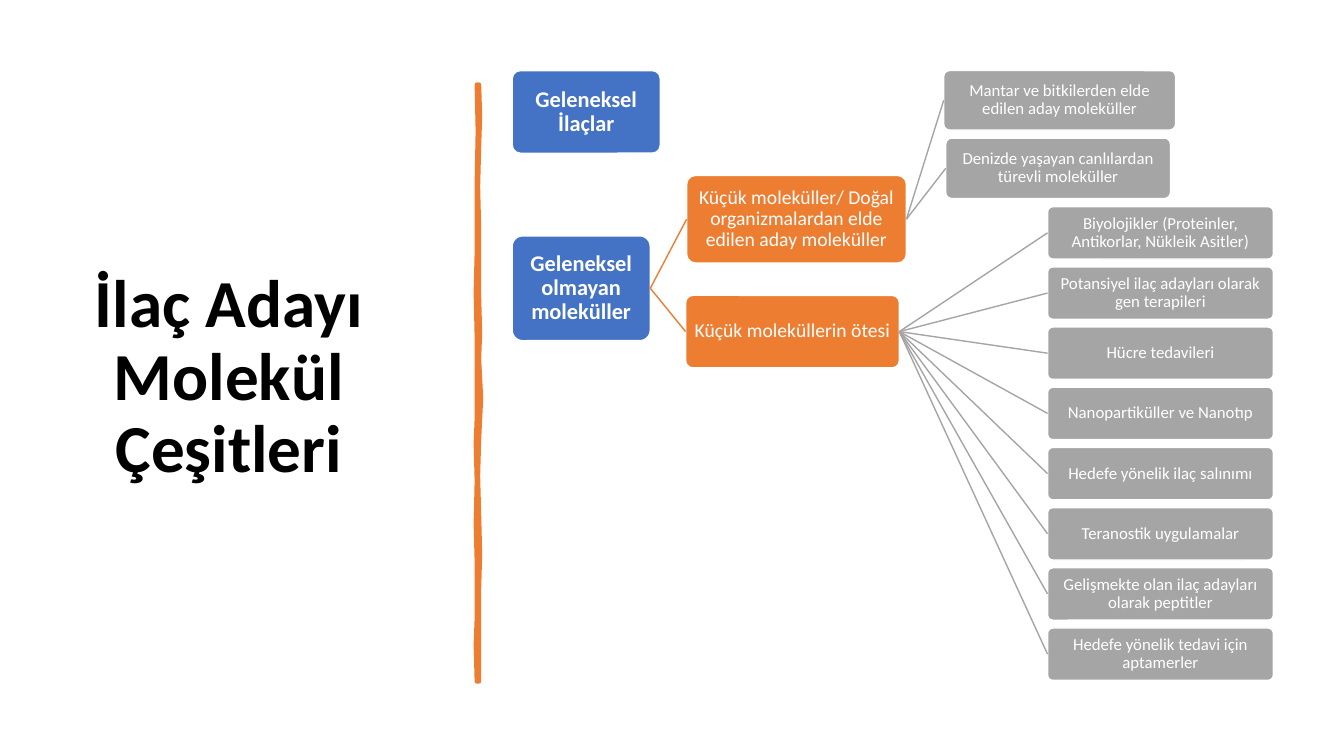
from dataclasses import dataclass
from typing import Optional

from lxml.etree import SubElement
from pptx import Presentation
from pptx.dml.color import RGBColor
from pptx.enum.shapes import MSO_CONNECTOR as Connector, MSO_SHAPE as Preset
from pptx.enum.text import MSO_ANCHOR as Anchor, MSO_AUTO_SIZE as AutoSize, PP_ALIGN as Align
from pptx.oxml.ns import qn
from pptx.util import Inches, Pt


@dataclass(frozen=True)
class Theme:
    font: str = "Calibri"
    black: str = "000000"
    white: str = "FFFFFF"
    blue: str = "4472C4"
    orange: str = "ED7D31"
    grey: str = "A5A5A5"
    title_size: float = 48
    group_size: float = 16
    branch_size: float = 14
    leaf_size: float = 12
    line_width: float = 1
    divider_width: float = 3.25


THEME = Theme()


@dataclass(frozen=True)
class Level:
    color: str
    size: float
    bold: bool = False


GROUP = Level(THEME.blue, THEME.group_size, True)
BRANCH = Level(THEME.orange, THEME.branch_size)
LEAF = Level(THEME.grey, THEME.leaf_size)


@dataclass(frozen=True)
class Node:
    text: str
    left: float
    top: float
    width: float
    height: float
    level: Level
    parent: Optional[str] = None


# Tree content
TRADITIONAL = "Geleneksel İlaçlar"
NON_TRADITIONAL = "Geleneksel olmayan moleküller"
NATURAL = "Küçük moleküller/ Doğal organizmalardan elde edilen aday moleküller"
BEYOND = "Küçük moleküllerin ötesi"
BEYOND_LEAVES = [
    "Biyolojikler (Proteinler, Antikorlar, Nükleik Asitler)",
    "Potansiyel ilaç adayları olarak gen terapileri",
    "Hücre tedavileri",
    "Nanopartiküller ve Nanotıp",
    "Hedefe yönelik ilaç salınımı",
    "Teranostik uygulamalar",
    "Gelişmekte olan ilaç adayları olarak peptitler",
    "Hedefe yönelik tedavi için aptamerler",
]
FIRST_LEAF, LAST_LEAF = 2.05, 6.23
LEAF_PITCH = (LAST_LEAF - FIRST_LEAF) / (len(BEYOND_LEAVES) - 1)

NODES = [
    Node(TRADITIONAL, 5.08, 0.7, 1.47, 0.82, GROUP),
    Node(NON_TRADITIONAL, 5.08, 2.34, 1.37, 1.04, GROUP),
    Node(NATURAL, 6.81, 1.74, 2.18, 0.87, BRANCH, NON_TRADITIONAL),
    Node("Mantar ve bitkilerden elde edilen aday moleküller",
         9.36, 0.7, 2.3, 0.59, LEAF, NATURAL),
    Node("Denizde yaşayan canlılardan türevli moleküller",
         9.38, 1.37, 2.23, 0.6, LEAF, NATURAL),
    Node(BEYOND, 6.8, 2.93, 2.12, 0.72, BRANCH, NON_TRADITIONAL),
] + [
    Node(text, 10.39, FIRST_LEAF + row * LEAF_PITCH, 2.24, 0.52, LEAF, BEYOND)
    for row, text in enumerate(BEYOND_LEAVES)
]

# Hand-drawn divider: down the right edge, up the left edge
DIVIDER = [
    (4.75, 0.84), (4.76, 1.15), (4.75, 1.46), (4.74, 1.85), (4.75, 2.26),
    (4.75, 2.94), (4.76, 3.3), (4.75, 3.56), (4.77, 3.95), (4.75, 4.36),
    (4.74, 4.72), (4.75, 5.1), (4.76, 5.5), (4.75, 5.84), (4.75, 6.76),
    (4.73, 6.76), (4.72, 6.4), (4.73, 6.13), (4.73, 5.57), (4.72, 5.2),
    (4.73, 4.77), (4.72, 4.4), (4.73, 4.15), (4.73, 3.35), (4.72, 2.9),
    (4.73, 2.5), (4.73, 1.81), (4.74, 1.3), (4.73, 0.84),
]


def write_text(box, text: str, size: float, color: str, bold: bool) -> None:
    frame = box.text_frame
    frame.text = text
    for name, value in {"word_wrap": True, "auto_size": AutoSize.NONE,
                        "vertical_anchor": Anchor.MIDDLE}.items():
        setattr(frame, name, value)
    para = frame.paragraphs[0]
    para.alignment = Align.CENTER
    para.line_spacing = 0.9
    span = para.runs[0]
    for name, value in {"name": THEME.font, "size": Pt(size), "bold": bold}.items():
        setattr(span.font, name, value)
    span.font.color.rgb = RGBColor.from_string(color)


def paint(shape, fill: str, line: str, width: float) -> None:
    shape.shadow.inherit = False
    shape.fill.solid()
    shape.fill.fore_color.rgb = RGBColor.from_string(fill)
    shape.line.color.rgb = RGBColor.from_string(line)
    shape.line.width = Pt(width)


def draw_title(page) -> None:
    title = page.shapes.title
    for name, value in {"left": 0.69, "top": 0.7, "width": 3.16, "height": 6.11}.items():
        setattr(title, name, Inches(value))
    write_text(title, "İlaç Adayı Molekül Çeşitleri", THEME.title_size, THEME.black, True)


def draw_divider(page) -> None:
    points = [(Inches(x), Inches(y)) for x, y in DIVIDER]
    builder = page.shapes.build_freeform(*points[0])
    builder.add_line_segments(points[1:], close=True)
    paint(builder.convert_to_shape(), THEME.orange, THEME.orange, THEME.divider_width)


def draw_node(page, node: Node):
    box = page.shapes.add_shape(
        Preset.ROUNDED_RECTANGLE, Inches(node.left), Inches(node.top),
        Inches(node.width), Inches(node.height))
    box.adjustments[0] = 0.1
    paint(box, node.level.color, THEME.white, THEME.line_width)
    for side in ("left", "top", "right", "bottom"):
        setattr(box.text_frame, f"margin_{side}", Inches(0.01))
    write_text(box, node.text, node.level.size, THEME.white, node.level.bold)
    return box


def join(page, parent, child, color: str) -> None:
    link = page.shapes.add_connector(Connector.STRAIGHT, 0, 0, 0, 0)
    link.begin_connect(parent, 3)
    link.end_connect(child, 1)
    link.line.color.rgb = RGBColor.from_string(color)
    link.line.width = Pt(THEME.line_width)
    SubElement(link._element.spPr, qn("a:effectLst"))


def main() -> None:
    deck = Presentation()
    deck.slide_width, deck.slide_height = Inches(13.33), Inches(7.5)
    page = deck.slides.add_slide(deck.slide_layouts[5])
    draw_title(page)
    draw_divider(page)

    # Molecule tree
    boxes = {}
    for node in NODES:
        boxes[node.text] = draw_node(page, node)
        if node.parent:
            join(page, boxes[node.parent], boxes[node.text], node.level.color)

    deck.save("out.pptx")


if __name__ == "__main__":
    main()
